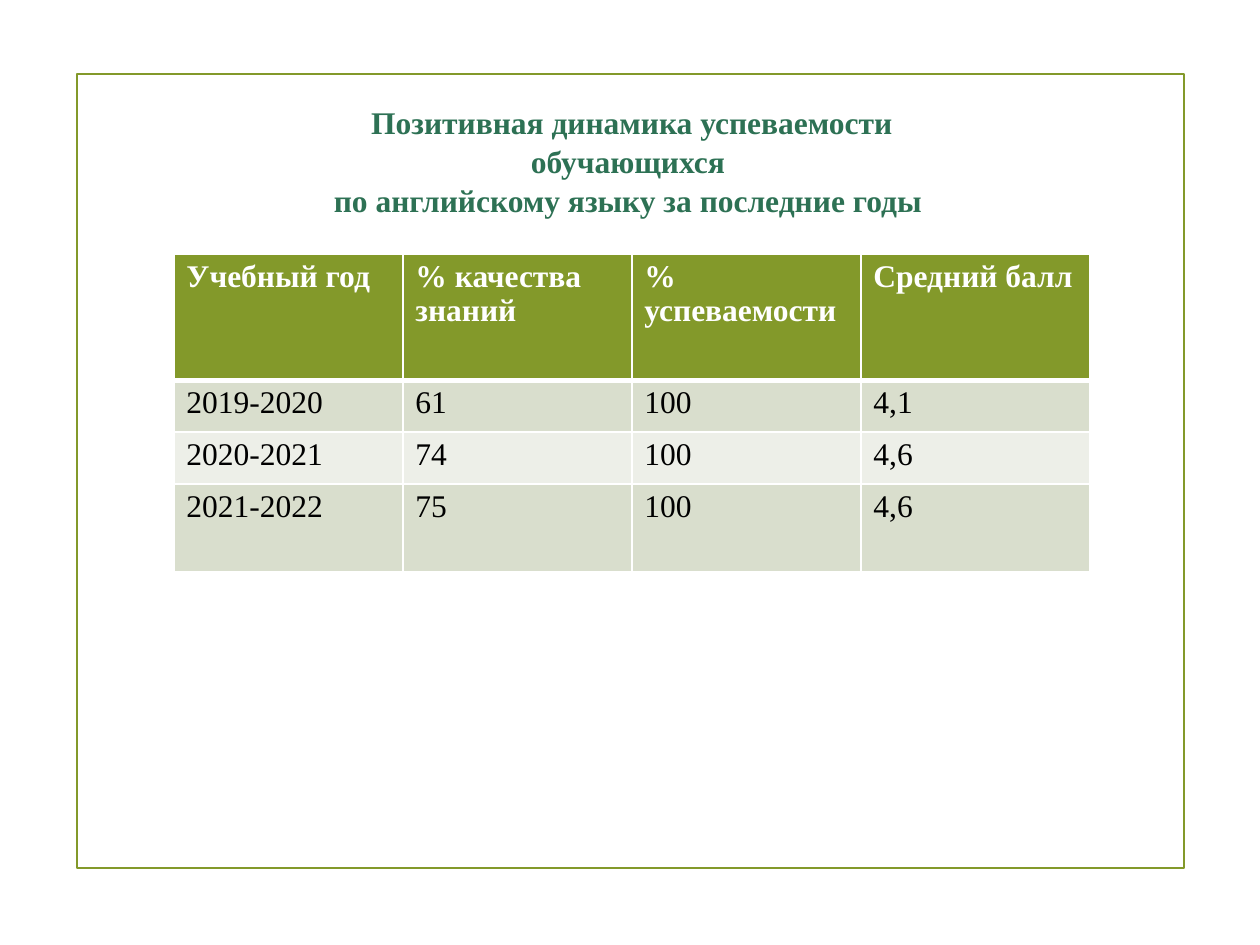
from lxml.etree import SubElement
from pptx import Presentation
from pptx.dml.color import RGBColor
from pptx.enum.shapes import MSO_SHAPE
from pptx.enum.text import MSO_AUTO_SIZE, PP_ALIGN
from pptx.oxml.ns import qn
from pptx.util import Inches, Pt

COLORS = {
    "olive": "83992A",
    "title": "2D7154",
    "white": "FFFFFF",
    "black": "000000",
    "band_dark": "D9DECD",
    "band_light": "EDEFE8",
}
FONT = "Times New Roman"
TEXT_SIZE = 18

TITLE = [
    "Позитивная динамика успеваемости обучающихся ",
    "по английскому языку за последние годы ",
]
RESULTS = [
    ["Учебный год", "% качества знаний", "% успеваемости", "Средний балл"],
    ["2019-2020", "61", "100", "4,1"],
    ["2020-2021", "74", "100", "4,6"],
    ["2021-2022", "75", "100", "4,6"],
]
ROW_HEIGHTS = [1, 0.41, 0.41, 0.7]

FRAME_AREA = (0.61, 0.59, 8.79, 6.3)
TITLE_AREA = (2.09, 0.76, 5.85, 0.71)
TABLE_AREA = (1.38, 2.02, 7.27, sum(ROW_HEIGHTS))


def color(name):
    return RGBColor.from_string(COLORS[name])


def place(area):
    return [Inches(length) for length in area]


def write(para, text, color_name, bold, spacing):
    para.line_spacing = spacing
    span = para.add_run()
    span.text = text
    span.font.name = FONT
    span.font.size = Pt(TEXT_SIZE)
    span.font.bold = bold
    span.font.color.rgb = color(color_name)


def add_borders(cell, bottom_width):
    properties = cell._tc.get_or_add_tcPr()
    widths = {"lnL": 1, "lnR": 1, "lnT": 1, "lnB": bottom_width}
    for position, (side, width) in enumerate(widths.items()):
        line = SubElement(properties, qn(f"a:{side}"), w=str(Pt(width)))
        fill = SubElement(line, qn("a:solidFill"))
        SubElement(fill, qn("a:srgbClr"), val=COLORS["white"])
        properties.insert(position, line)


def add_frame(page):
    frame = page.shapes.add_shape(MSO_SHAPE.RECTANGLE, *place(FRAME_AREA))
    frame.shadow.inherit = False
    frame.fill.background()
    frame.line.color.rgb = color("olive")
    frame.line.width = Pt(1.25)


def add_title(page):
    box = page.shapes.add_textbox(*place(TITLE_AREA)).text_frame
    box.word_wrap = True
    box.auto_size = MSO_AUTO_SIZE.SHAPE_TO_FIT_TEXT
    for index, text in enumerate(TITLE):
        para = box.add_paragraph() if index else box.paragraphs[0]
        para.alignment = PP_ALIGN.CENTER
        write(para, text, "title", True, 1.03)


def add_results(page):
    columns = len(RESULTS[0])
    table = page.shapes.add_table(len(RESULTS), columns, *place(TABLE_AREA)).table
    for column in table.columns:
        column.width = Inches(TABLE_AREA[2] / columns)
    for row_index, (values, height) in enumerate(zip(RESULTS, ROW_HEIGHTS)):
        table.rows[row_index].height = Inches(height)
        header = row_index == 0
        band = "olive" if header else "band_dark" if row_index % 2 else "band_light"
        for column_index, value in enumerate(values):
            cell = table.cell(row_index, column_index)
            cell.fill.solid()
            cell.fill.fore_color.rgb = color(band)
            add_borders(cell, 3 if header else 1)
            write(cell.text_frame.paragraphs[0], value,
                  "white" if header else "black", header, 0.97)


def main():
    deck = Presentation()
    deck.slide_width, deck.slide_height = Inches(10), Inches(7.5)
    page = deck.slides.add_slide(deck.slide_layouts[6])
    add_frame(page)
    add_title(page)
    add_results(page)
    deck.save("out.pptx")


if __name__ == "__main__":
    main()
